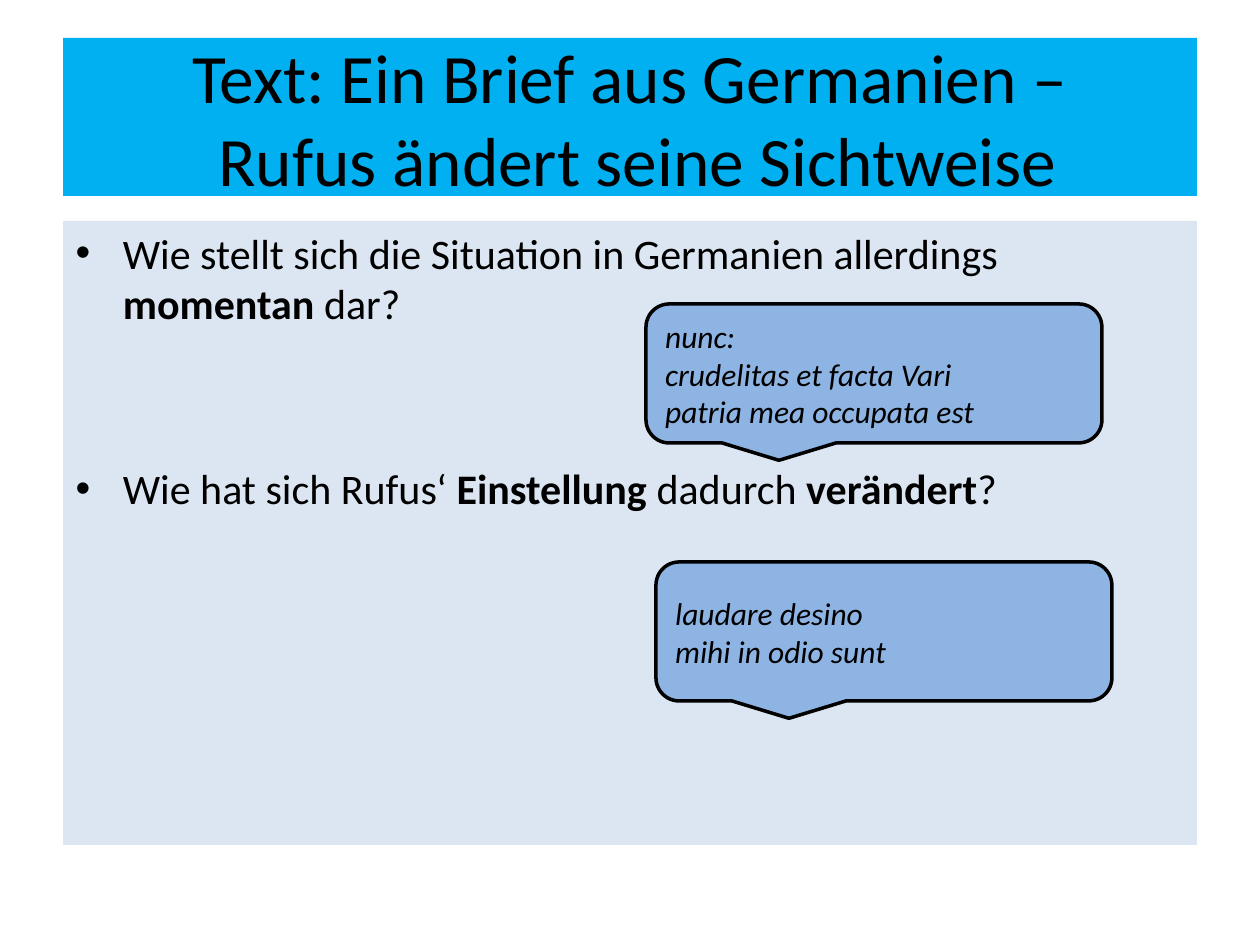
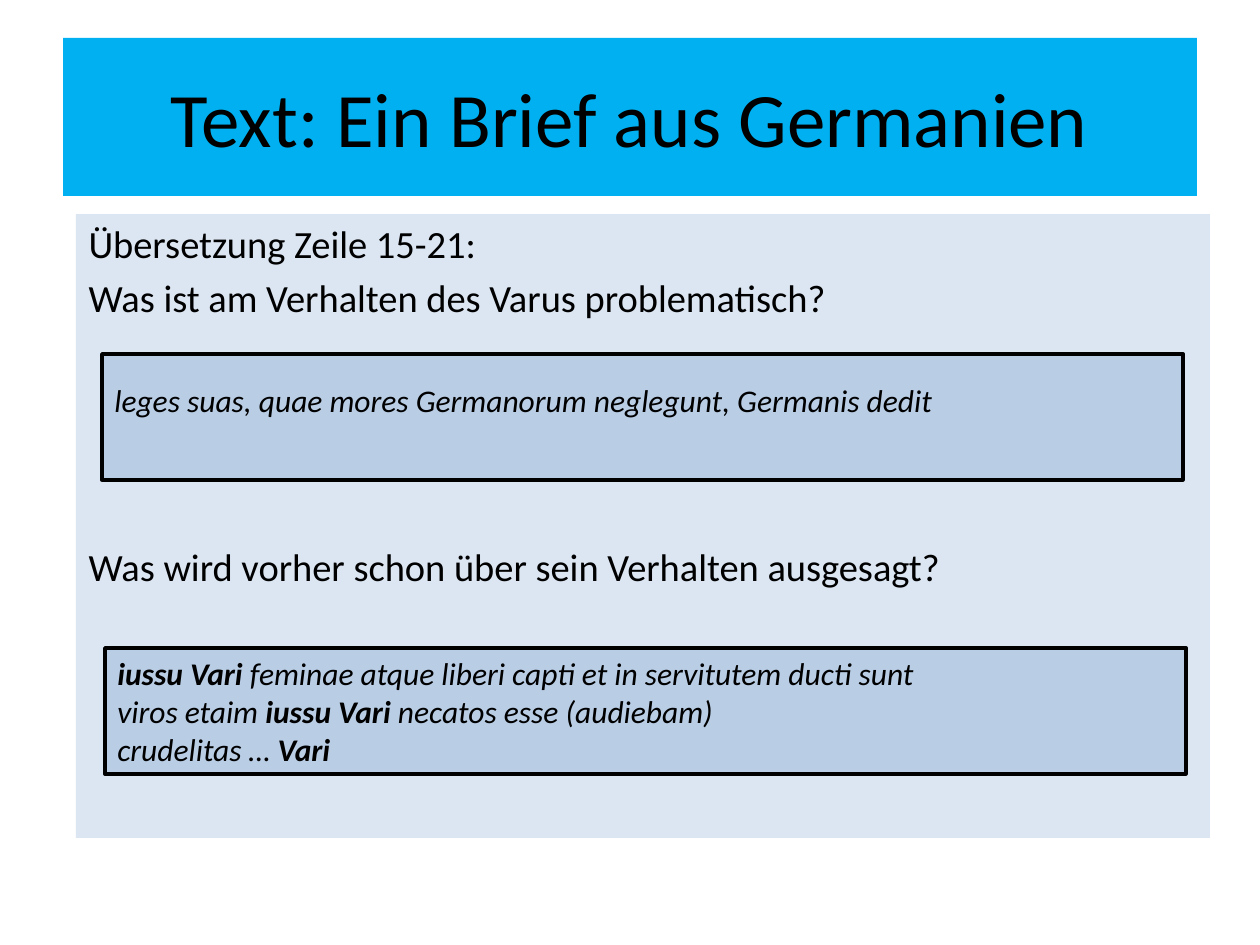
from pptx import Presentation
from pptx.dml.color import RGBColor
from pptx.enum.shapes import MSO_SHAPE as Shape
from pptx.enum.text import MSO_ANCHOR as Anchor, MSO_AUTO_SIZE as AutoSize, PP_ALIGN as Align
from pptx.util import Emu, Inches, Pt
from lxml import etree

PX = 914400 / 126
BLACK = RGBColor(0x00, 0x00, 0x00)
TITLE_BLUE = RGBColor(0x00, 0xB0, 0xF0)
BODY_BLUE = RGBColor(0xDC, 0xE6, 0xF2)
CALLOUT_BLUE = RGBColor(0x8E, 0xB4, 0xE3)
QUOTE_BLUE = RGBColor(0xB9, 0xCD, 0xE5)
FONT = "Calibri"
DRAWING_NS = "http://schemas.openxmlformats.org/drawingml/2006/main"


def place(shape, box, fill):
    """Move the shape to a px box (left, top, width, height) and fill it."""
    shape.left, shape.top, shape.width, shape.height = [Emu(round(n * PX)) for n in box]
    shape.fill.solid()
    shape.fill.fore_color.rgb = fill


def write(shape, lines, size, align=Align.LEFT, italic=False):
    """Write one paragraph per line; *asterisks* mark bold, a tuple is joined by line breaks."""
    frame = shape.text_frame
    frame.word_wrap = True
    frame.auto_size = AutoSize.NONE
    for number, line in enumerate(lines):
        para = frame.paragraphs[0] if number == 0 else frame.add_paragraph()
        para.alignment = align
        para.font.name, para.font.size = FONT, Pt(size)
        para.font.italic = italic
        para.font.color.rgb = BLACK
        for row, words in enumerate(line if isinstance(line, tuple) else (line,)):
            if row:
                para.add_line_break()
            for part, words_part in enumerate(words.split("*")):
                if words_part:
                    span = para.add_run()
                    span.text = words_part
                    if part % 2:
                        span.font.bold = True


# Per page: title, body and the answer boxes laid over the body
pages = [
    dict(
        title=("Text: Ein Brief aus Germanien –", " Rufus ändert seine Sichtweise"),
        title_size=39.6,
        body_at=(63, 221),
        body=["Wie stellt sich die Situation in Germanien allerdings *momentan* dar?",
              "Wie hat sich Rufus‘ *Einstellung* dadurch *verändert*?"],
        body_size=24, bullets=True, gap=77,
        answer_shape=Shape.ROUNDED_RECTANGULAR_CALLOUT,
        answer_size=(456, 139), answer_fill=CALLOUT_BLUE,
        answers=[
            (646, 304, 6, ["nunc:", "crudelitas et facta Vari", "patria mea occupata est"]),
            (656, 562, 6, ["laudare desino", "mihi in odio sunt"]),
        ],
    ),
    dict(
        title="Text: Ein Brief aus Germanien",
        title_size=44,
        body_at=(76, 214),
        body=["Übersetzung Zeile 15-21:",
              "Was ist am Verhalten des Varus problematisch?",
              "Was wird vorher schon über sein Verhalten ausgesagt?"],
        body_size=22, bullets=False, gap=127,
        answer_shape=Shape.RECTANGLE,
        answer_size=(1081, 126), answer_fill=QUOTE_BLUE,
        answers=[
            (102, 354, 40, ["leges suas, quae mores Germanorum neglegunt, Germanis dedit"]),
            (105, 648, 6, ["*iussu Vari* feminae atque liberi capti et in servitutem ducti sunt",
                           "viros etaim *iussu Vari* necatos esse (audiebam)",
                           "crudelitas … *Vari*"]),
        ],
    ),
]

deck = Presentation()
deck.slide_width, deck.slide_height = Inches(10), Inches(7.5)

for content in pages:
    page = deck.slides.add_slide(deck.slide_layouts[1])

    title = page.shapes.title
    place(title, (63, 38, 1134, 158), TITLE_BLUE)
    write(title, [content["title"]], content["title_size"], Align.CENTER)

    body = page.placeholders[1]
    place(body, (*content["body_at"], 1134, 624), BODY_BLUE)
    write(body, content["body"], content["body_size"])
    paras = body.text_frame.paragraphs
    paras[-1].space_before = Pt(content["gap"])  # room for the first answer
    if not content["bullets"]:
        for para in paras:
            props = para._p.get_or_add_pPr()
            props.set("marL", "0")
            props.set("indent", "0")
            no_bullet = etree.Element(f"{{{DRAWING_NS}}}buNone")
            props.find(f"{{{DRAWING_NS}}}defRPr").addprevious(no_bullet)

    for left, top, bottom_inset, lines in content["answers"]:
        answer = page.shapes.add_shape(content["answer_shape"], 0, 0, 0, 0)
        place(answer, (left, top, *content["answer_size"]), content["answer_fill"])
        answer.shadow.inherit = False
        answer.line.color.rgb = BLACK
        answer.line.width = Pt(2)
        answer.text_frame.vertical_anchor = Anchor.MIDDLE
        answer.text_frame.margin_bottom = Emu(round(bottom_inset * PX))
        write(answer, lines, 18, italic=True)

deck.save("out.pptx")
